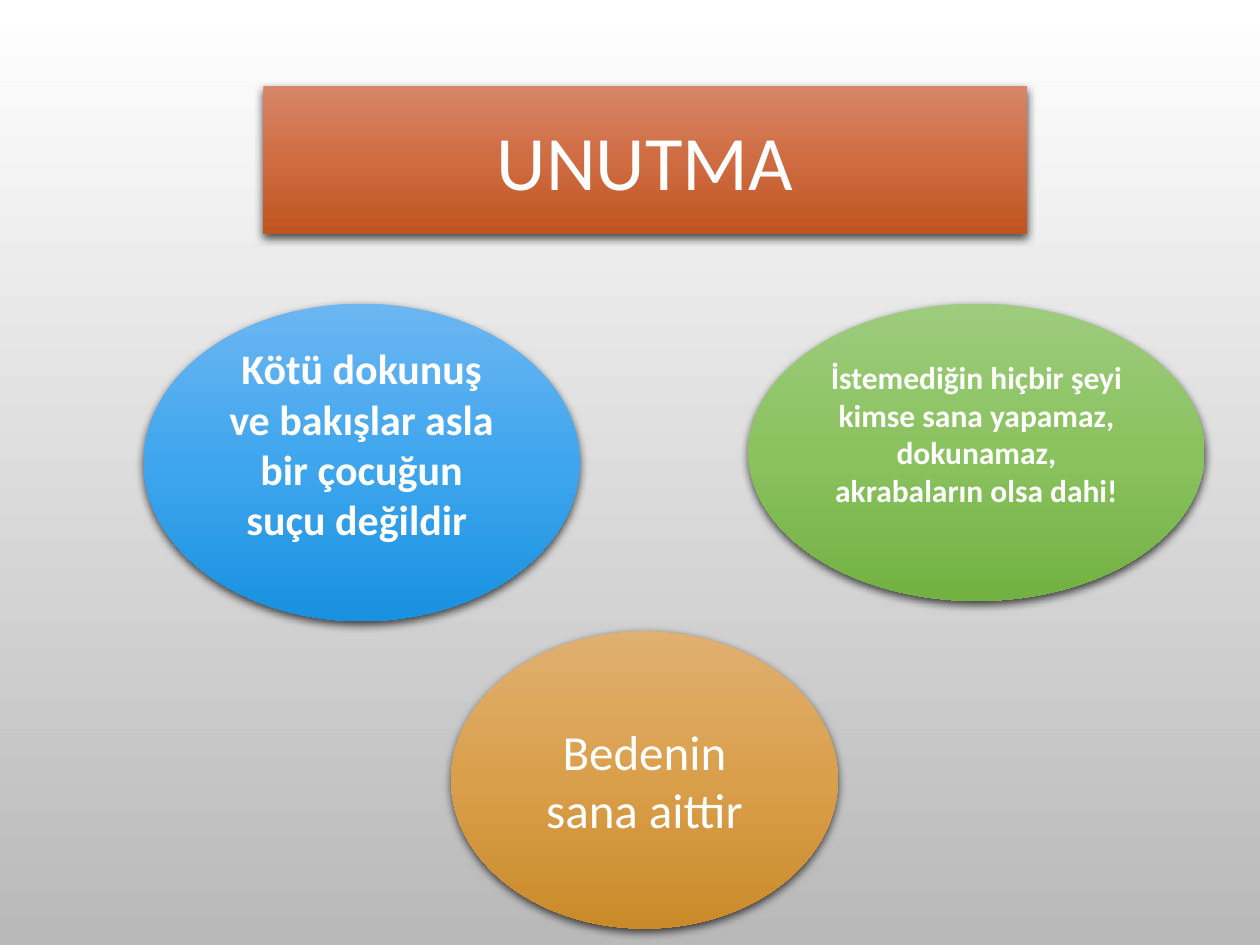
"""Build the "UNUTMA" slide: a title banner above three reminder ovals."""
from copy import deepcopy

from pptx import Presentation
from pptx.dml.color import RGBColor
from pptx.enum import shapes, text
from pptx.oxml import ns, parse_xml
from pptx.util import Inches, Pt

RECTANGLE = shapes.MSO_SHAPE.RECTANGLE
OVAL = shapes.MSO_SHAPE.OVAL
BACKGROUND = ("FFFFFF", "B9B9B9")
MARGIN, LIFTED_MARGIN = 0.05, 0.35

PANELS = [
    {"text": "UNUTMA", "kind": RECTANGLE, "box": (2.09, 0.68, 6.06, 1.18),
     "colors": ("D68669", "CF6C42", "C0541F"), "size": 44, "bold": False, "bottom": MARGIN},
    {"text": "Bedenin sana aittir", "kind": OVAL, "box": (3.58, 5.01, 3.07, 2.36),
     "colors": ("E0B071", "DA9F4B", "C98A29"), "size": 28, "bold": False, "bottom": MARGIN},
    {"text": "İstemediğin hiçbir şeyi kimse sana yapamaz, dokunamaz, akrabaların olsa dahi!",
     "kind": OVAL, "box": (5.94, 2.41, 3.62, 2.36),
     "colors": ("9ECC7E", "8AC25F", "73B142"), "size": 18, "bold": True, "bottom": LIFTED_MARGIN},
    {"text": "Kötü dokunuş ve bakışlar asla bir çocuğun suçu değildir ",
     "kind": OVAL, "box": (1.14, 2.41, 3.46, 2.52),
     "colors": ("6CB6F1", "3FA6EE", "1891DF"), "size": 24, "bold": True, "bottom": LIFTED_MARGIN},
]


def color(value):
    return RGBColor.from_string(value)


def paint_gradient(fill, element, colors):
    fill.gradient()
    fill.gradient_angle = 270
    stop_list = next(element.iter(ns.qn("a:gsLst")))
    while len(stop_list) < len(colors):
        stop_list.append(deepcopy(stop_list[0]))
    for index, (stop, value) in enumerate(zip(fill.gradient_stops, colors)):
        stop.color.rgb = color(value)
        stop_list[index].set("pos", str(100000 * index // (len(colors) - 1)))


def add_shadow(shape):
    shape.shadow.inherit = False
    effects = shape._element.spPr.find(ns.qn("a:effectLst"))
    effects.append(parse_xml(
        f'<a:outerShdw {ns.nsdecls("a")} blurRad="{Pt(5)}" dist="{Pt(2)}" dir="5400000" '
        'rotWithShape="0"><a:srgbClr val="000000"><a:alpha val="69000"/></a:srgbClr>'
        '</a:outerShdw>'))


def add_panel(slide, panel):
    shape = slide.shapes.add_shape(panel["kind"], *map(Inches, panel["box"]))
    paint_gradient(shape.fill, shape._element, panel["colors"])
    shape.line.fill.background()
    add_shadow(shape)
    frame = shape.text_frame
    frame.word_wrap = True
    frame.vertical_anchor = text.MSO_ANCHOR.MIDDLE
    frame.margin_bottom = Inches(panel["bottom"])
    paragraph = frame.paragraphs[0]
    paragraph.alignment = text.PP_ALIGN.CENTER
    run = paragraph.add_run()
    run.text = panel["text"]
    run.font.name = "Calibri"
    run.font.size = Pt(panel["size"])
    run.font.bold = panel["bold"]
    run.font.color.rgb = color("FFFFFF")


def main():
    presentation = Presentation()
    presentation.slide_width, presentation.slide_height = Inches(10), Inches(7.5)
    slide = presentation.slides.add_slide(presentation.slide_layouts[6])
    paint_gradient(slide.background.fill, slide._element, BACKGROUND)
    for panel in PANELS:
        add_panel(slide, panel)
    presentation.save("out.pptx")


if __name__ == "__main__":
    main()
